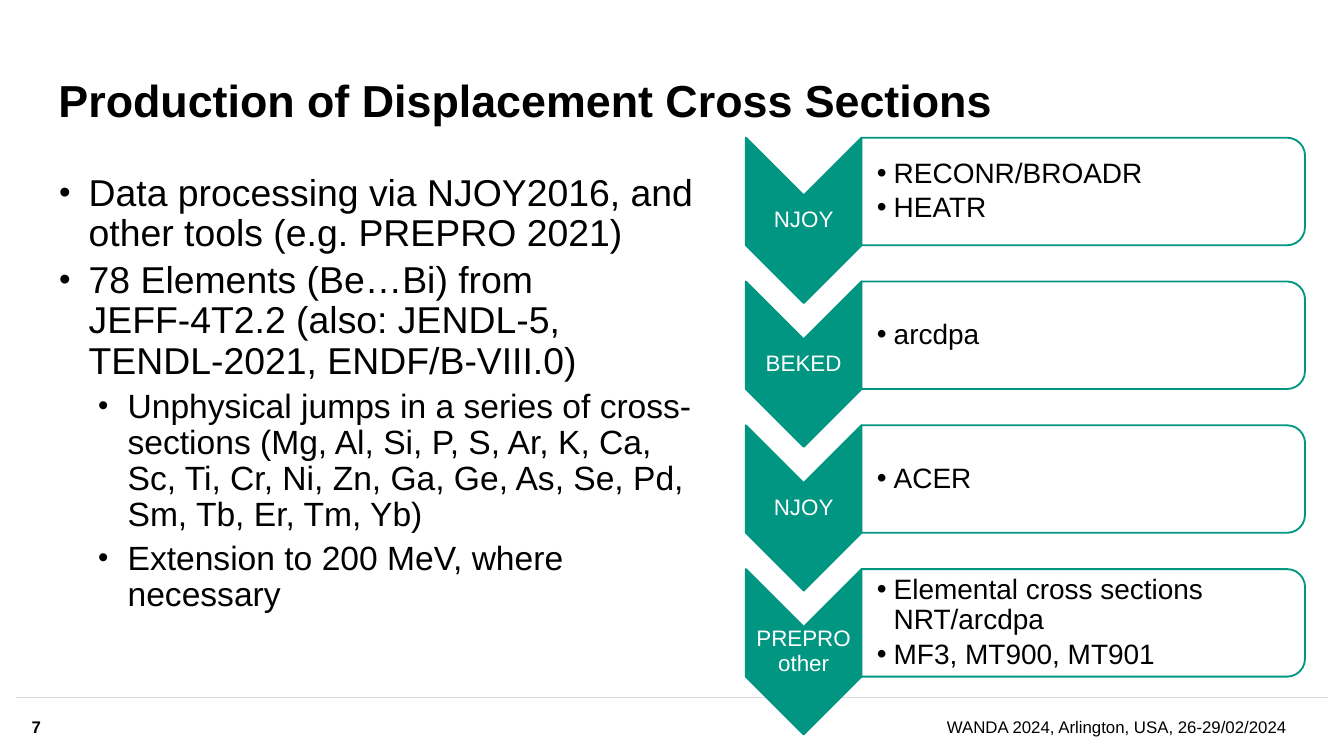
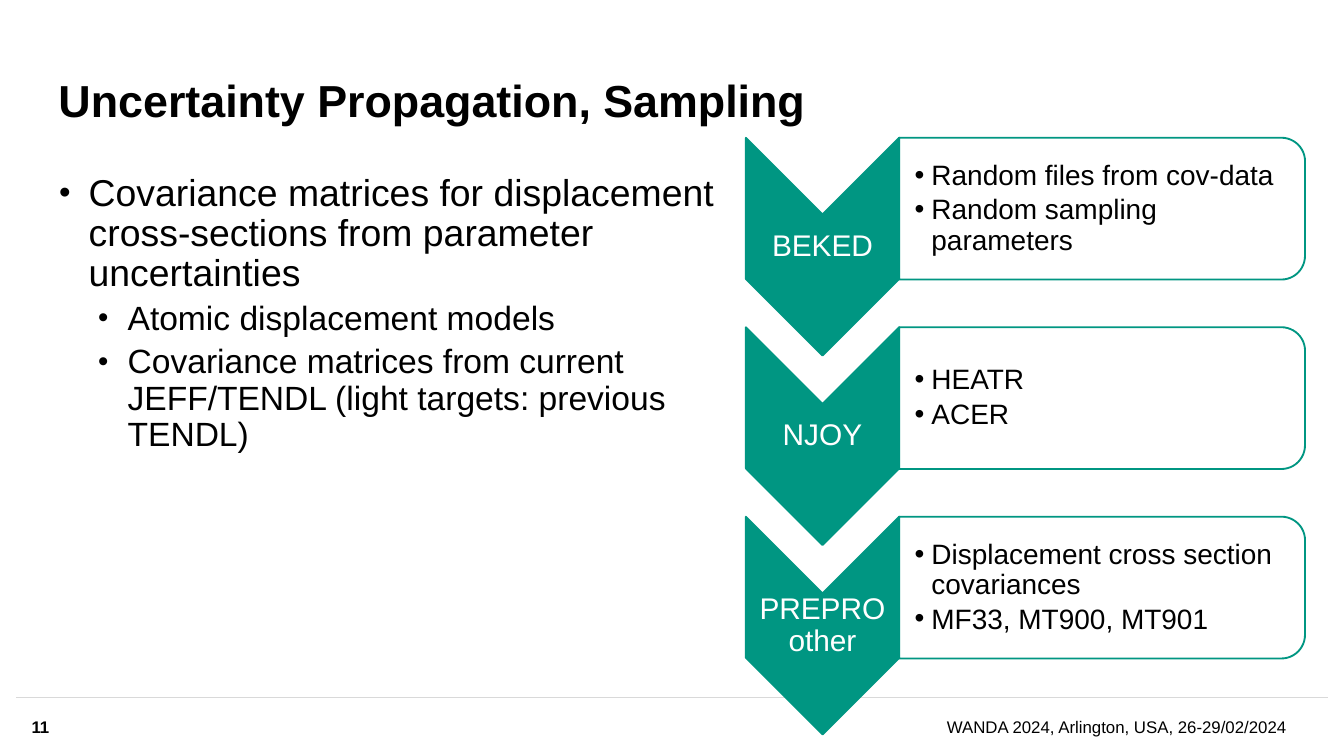
from dataclasses import dataclass
from typing import Any, NamedTuple

from lxml.etree import SubElement
from pptx import Presentation
from pptx.dml.color import RGBColor
from pptx.enum.shapes import MSO_CONNECTOR, MSO_SHAPE
from pptx.enum.text import MSO_ANCHOR, MSO_AUTO_SIZE, PP_ALIGN
from pptx.oxml.ns import qn
from pptx.util import Pt

PX = 4572
SLIDE_WIDTH, SLIDE_HEIGHT = 2000, 1125
FONT = "Arial"
COLOURS = {"ink": "000000", "paper": "FFFFFF", "teal": "009682", "rule": "D9D9D9"}
FOOTER = "WANDA 2024, Arlington, USA, 26-29/02/2024"
FOOTER_TOP, FOOTER_HEIGHT, RULE_MARGIN = 1038, 86, 24
STEP_LEFT, STEP_TOP, PANEL_RIGHT = 1110, 205, 1942


class Area(NamedTuple):
    left: int
    top: int
    width: int
    height: int


class Bullet(NamedTuple):
    text: str
    level: int = 0


class Step(NamedTuple):
    label: str
    items: tuple[str, ...]


class BulletStyle(NamedTuple):
    indent: int
    hanging: int
    percent: int


@dataclass(frozen=True)
class Flow:
    width: int
    height: int
    pitch: int
    label_size: int
    steps: tuple[Step, ...]


@dataclass(frozen=True)
class Content:
    number: int
    title: str
    body: Area
    bullets: tuple[Bullet, ...]
    flow: Flow


BODY_STYLES = (BulletStyle(44, 44, 88), BulletStyle(102, 44, 88))
PANEL_STYLE = BulletStyle(25, 25, 100)

CONTENTS = (
    Content(
        7,
        "Production of Displacement Cross Sections",
        Area(88, 259, 960, 736),
        (
            Bullet("Data processing via NJOY2016, and other tools (e.g. PREPRO 2021)"),
            Bullet("78 Elements (Be…Bi) from JEFF-4T2.2 (also: JENDL-5, TENDL-2021, ENDF/B-VIII.0)"),
            Bullet(
                "Unphysical jumps in a series of cross-sections (Mg, Al, Si, P, S, Ar, K, Ca, "
                "Sc, Ti, Cr, Ni, Zn, Ga, Ge, As, Se, Pd, Sm, Tb, Er, Tm, Yb)",
                1,
            ),
            Bullet("Extension to 200 MeV, where necessary", 1),
        ),
        Flow(172, 246, 214, 12, (
            Step("NJOY", ("RECONR/BROADR", "HEATR")),
            Step("BEKED", ("arcdpa",)),
            Step("NJOY", ("ACER",)),
            Step("PREPRO\vother", ("Elemental cross sections NRT/arcdpa", "MF3, MT900, MT901")),
        )),
    ),
    Content(
        11,
        "Uncertainty Propagation, Sampling",
        Area(88, 259, 1068, 736),
        (
            Bullet("Covariance matrices for displacement cross-sections from parameter uncertainties"),
            Bullet("Atomic displacement models", 1),
            Bullet("Covariance matrices from current JEFF/TENDL (light targets: previous TENDL)", 1),
        ),
        Flow(228, 324, 282, 16, (
            Step("BEKED", ("Random files from cov-data", "Random sampling parameters")),
            Step("NJOY", ("HEATR", "ACER")),
            Step("PREPRO\vother", ("Displacement cross section covariances", "MF33, MT900, MT901")),
        )),
    ),
)


def colour(name: str) -> RGBColor:
    return RGBColor.from_string(COLOURS[name])


def emu(area: Area) -> list[int]:
    return [length * PX for length in area]


def prepare_frame(box: Any, *, anchor: Any = MSO_ANCHOR.TOP, inset: int = 0, left_inset: int = 0) -> Any:
    frame = box.text_frame
    frame.word_wrap = True
    frame.auto_size = MSO_AUTO_SIZE.NONE
    frame.vertical_anchor = anchor
    frame.margin_left = max(inset, left_inset) * PX
    frame.margin_top = frame.margin_right = frame.margin_bottom = inset * PX
    return frame


def add_frame(shapes: Any, area: Area, **options: Any) -> Any:
    return prepare_frame(shapes.add_textbox(*emu(area)), **options)


def add_bullet(para: Any, style: BulletStyle) -> None:
    properties = para._p.get_or_add_pPr()
    properties.set("marL", str(style.indent * PX))
    properties.set("indent", str(-style.hanging * PX))
    SubElement(properties, qn("a:buSzPct"), val=str(style.percent * 1000))
    SubElement(properties, qn("a:buFont"), typeface=FONT)
    SubElement(properties, qn("a:buChar"), char="•")


def write(
    frame: Any,
    text: str,
    *,
    size: int,
    ink: str = "ink",
    bold: bool = False,
    align: Any = PP_ALIGN.LEFT,
    spacing: float = 1.0,
    before: float = 0,
    after: float = 0,
    level: int = 0,
    bullet: BulletStyle | None = None,
) -> None:
    first = not frame.text
    para = frame.paragraphs[0] if first else frame.add_paragraph()
    para.text = text
    para.level = level
    if bullet:
        add_bullet(para, bullet)
    para.alignment = align
    para.line_spacing = spacing
    para.space_before = Pt(0 if first else before)
    para.space_after = Pt(after)
    for span in para.runs:
        span.font.name = FONT
        span.font.size = Pt(size)
        span.font.bold = bold
        span.font.color.rgb = colour(ink)
    for line_break in para._p.findall(qn("a:br")):
        SubElement(line_break, qn("a:rPr"), sz=str(size * 100))


def add_turned_shape(shapes: Any, kind: Any, area: Area, fill: str, opacity: int = 100) -> None:
    left, top, width, height = emu(area)
    shift = (width - height) // 2
    shape = shapes.add_shape(kind, left + shift, top - shift, height, width)
    shape.rotation = 90
    shape.shadow.inherit = False
    shape.fill.solid()
    shape.fill.fore_color.rgb = colour(fill)
    shape.line.color.rgb = colour("teal")
    shape.line.width = Pt(1)
    if opacity < 100:
        solid = shape._element.spPr.find(qn("a:solidFill"))
        SubElement(solid[0], qn("a:alpha"), val=str(opacity * 1000))


def add_footer(page: Any, number: int) -> None:
    start, end, level = RULE_MARGIN * PX, (SLIDE_WIDTH - RULE_MARGIN) * PX, FOOTER_TOP * PX
    rule = page.shapes.add_connector(MSO_CONNECTOR.STRAIGHT, start, level, end, level)
    rule.line.color.rgb = colour("rule")
    rule.line.width = Pt(1)
    SubElement(rule._element.spPr, qn("a:effectLst"))
    event = add_frame(page.shapes, Area(1204, FOOTER_TOP, 710, FOOTER_HEIGHT), anchor=MSO_ANCHOR.MIDDLE)
    write(event, FOOTER, size=9, align=PP_ALIGN.RIGHT)
    folio = add_frame(page.shapes, Area(47, FOOTER_TOP, 72, FOOTER_HEIGHT), anchor=MSO_ANCHOR.MIDDLE)
    write(folio, str(number), size=9, bold=True)


def add_title(page: Any, text: str) -> None:
    title = page.shapes.title
    title.left, title.top, title.width, title.height = emu(Area(87, 64, 1502, 126))
    frame = prepare_frame(title, anchor=MSO_ANCHOR.BOTTOM)
    write(frame, text, size=24, bold=True, spacing=0.9)


def add_body(page: Any, area: Area, bullets: tuple[Bullet, ...]) -> None:
    frame = add_frame(page.shapes, area)
    for bullet in bullets:
        write(frame, bullet.text, size=20 - 2 * bullet.level, spacing=0.9, before=3.6,
              level=bullet.level, bullet=BODY_STYLES[bullet.level])


def add_step(shapes: Any, flow: Flow, step: Step, top: int) -> None:
    chevron = Area(STEP_LEFT, top, flow.width, flow.height)
    add_turned_shape(shapes, MSO_SHAPE.CHEVRON, chevron, "teal")
    label_area = Area(STEP_LEFT, top + flow.width // 2, flow.width, flow.height - flow.width)
    label = add_frame(shapes, label_area, anchor=MSO_ANCHOR.MIDDLE, inset=2)
    write(label, step.label, size=flow.label_size, ink="paper", align=PP_ALIGN.CENTER,
          spacing=0.9, after=0.35 * flow.label_size)

    left = STEP_LEFT + flow.width
    panel = Area(left, top, PANEL_RIGHT - left, round(0.65 * flow.height))
    add_turned_shape(shapes, MSO_SHAPE.ROUND_2_SAME_RECTANGLE, panel, "paper", opacity=90)
    gap = round(0.05 * panel.height)
    items_area = Area(left, top + gap, panel.width - gap, panel.height - 2 * gap)
    items = add_frame(shapes, items_area, anchor=MSO_ANCHOR.MIDDLE, inset=2, left_inset=23)
    for item in step.items:
        write(items, item, size=15, spacing=0.9, after=2.25, level=1, bullet=PANEL_STYLE)


def add_flow(page: Any, flow: Flow) -> None:
    group = page.shapes.add_group_shape()
    for index, step in enumerate(flow.steps):
        add_step(group.shapes, flow, step, STEP_TOP + index * flow.pitch)


def main() -> None:
    deck = Presentation()
    deck.slide_width, deck.slide_height = SLIDE_WIDTH * PX, SLIDE_HEIGHT * PX
    for content in CONTENTS:
        page = deck.slides.add_slide(deck.slide_layouts[5])
        add_footer(page, content.number)
        add_title(page, content.title)
        add_body(page, content.body, content.bullets)
        add_flow(page, content.flow)
    deck.save("out.pptx")


if __name__ == "__main__":
    main()
